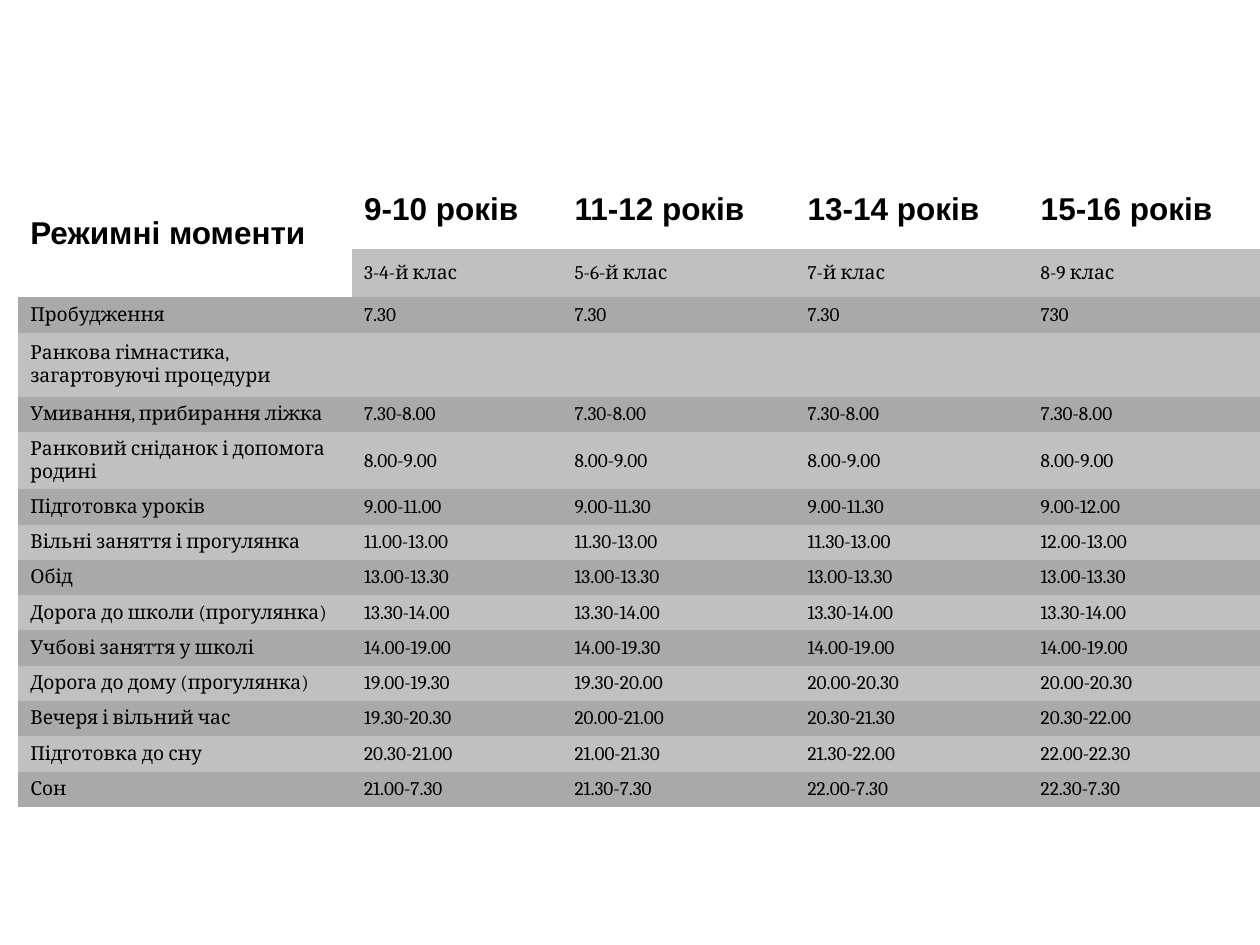
from lxml import etree
from pptx import Presentation
from pptx.dml.color import RGBColor
from pptx.enum.text import MSO_ANCHOR
from pptx.oxml.ns import qn
from pptx.util import Inches, Pt

MIDDLE = MSO_ANCHOR.MIDDLE
COLORS = {"text": "000000", "light": "C0C0C0", "dark": "A9A9A9", "edge": "CCCCCC"}
WIDTHS = [2.65, 1.67, 1.85, 1.85, 1.84]
HEIGHTS = [0.63, 0.38, 0.28, 0.51] + [0.28] * 11
ROWS = [
    ["Режимні моменти", "9-10 років", "11-12 років", "13-14 років", "15-16 років"],
    ["", "3-4-й клас", "5-6-й клас", "7-й клас", "8-9 клас"],
    ["Пробудження", "7.30", "7.30", "7.30", "730"],
    ["Ранкова гімнастика, загартовуючі процедури", "", "", "", ""],
    ["Умивання, прибирання ліжка"] + ["7.30-8.00"] * 4,
    ["Ранковий сніданок і допомога родині"] + ["8.00-9.00"] * 4,
    ["Підготовка уроків", "9.00-11.00", "9.00-11.30", "9.00-11.30", "9.00-12.00"],
    ["Вільні заняття і прогулянка", "11.00-13.00", "11.30-13.00", "11.30-13.00",
     "12.00-13.00"],
    ["Обід"] + ["13.00-13.30"] * 4,
    ["Дорога до школи (прогулянка)"] + ["13.30-14.00"] * 4,
    ["Учбові заняття у школі", "14.00-19.00", "14.00-19.30", "14.00-19.00",
     "14.00-19.00"],
    ["Дорога до дому (прогулянка)", "19.00-19.30", "19.30-20.00", "20.00-20.30",
     "20.00-20.30"],
    ["Вечеря і вільний час", "19.30-20.30", "20.00-21.00", "20.30-21.30",
     "20.30-22.00"],
    ["Підготовка до сну", "20.30-21.00", "21.00-21.30", "21.30-22.00", "22.00-22.30"],
    ["Сон", "21.00-7.30", "21.30-7.30", "22.00-7.30", "22.30-7.30"],
]


def write(cell, text, font="Cambria", size=11, bold=False):
    cell.vertical_anchor = MIDDLE
    para = cell.text_frame.paragraphs[0]
    if text:
        run = para.add_run()
        run.text = text
        style = run.font
    else:
        style = para.font
    style.name, style.size, style.bold = font, Pt(size), bold
    style.color.rgb = RGBColor.from_string(COLORS["text"])


def edge(cell):
    """Give all four sides a zero-width line."""
    props = cell._tc.get_or_add_tcPr()
    for side in ("lnL", "lnR", "lnT", "lnB"):
        line = etree.SubElement(props, qn(f"a:{side}"), w="0")
        fill = etree.SubElement(line, qn("a:solidFill"))
        etree.SubElement(fill, qn("a:srgbClr"), val=COLORS["edge"])


def paint(cell, name):
    if name is None:
        cell.fill.background()
    else:
        cell.fill.solid()
        cell.fill.fore_color.rgb = RGBColor.from_string(COLORS[name])


def add_plan(slide):
    frame = slide.shapes.add_table(
        len(ROWS), len(WIDTHS), Inches(0.14), Inches(1.35),
        Inches(sum(WIDTHS)), Inches(sum(HEIGHTS)))
    table = frame.table
    table.first_row = table.horz_banding = False
    for col, width in zip(table.columns, WIDTHS):
        col.width = Inches(width)
    for row, height in zip(table.rows, HEIGHTS):
        row.height = Inches(height)
    table.cell(0, 0).merge(table.cell(1, 0))
    for r, texts in enumerate(ROWS):
        band = "light" if r % 2 else "dark"
        for c, text in enumerate(texts):
            cell = table.cell(r, c)
            head = r == 0 or cell.is_spanned
            edge(cell)
            paint(cell, None if head else band)
            if r == 0:
                write(cell, text, font="Arial", size=18, bold=True)
            else:
                write(cell, text)


def main():
    deck = Presentation()
    deck.slide_width, deck.slide_height = Inches(10), Inches(7.5)
    slide = deck.slides.add_slide(deck.slide_layouts[6])
    add_plan(slide)
    deck.save("out.pptx")


if __name__ == "__main__":
    main()
